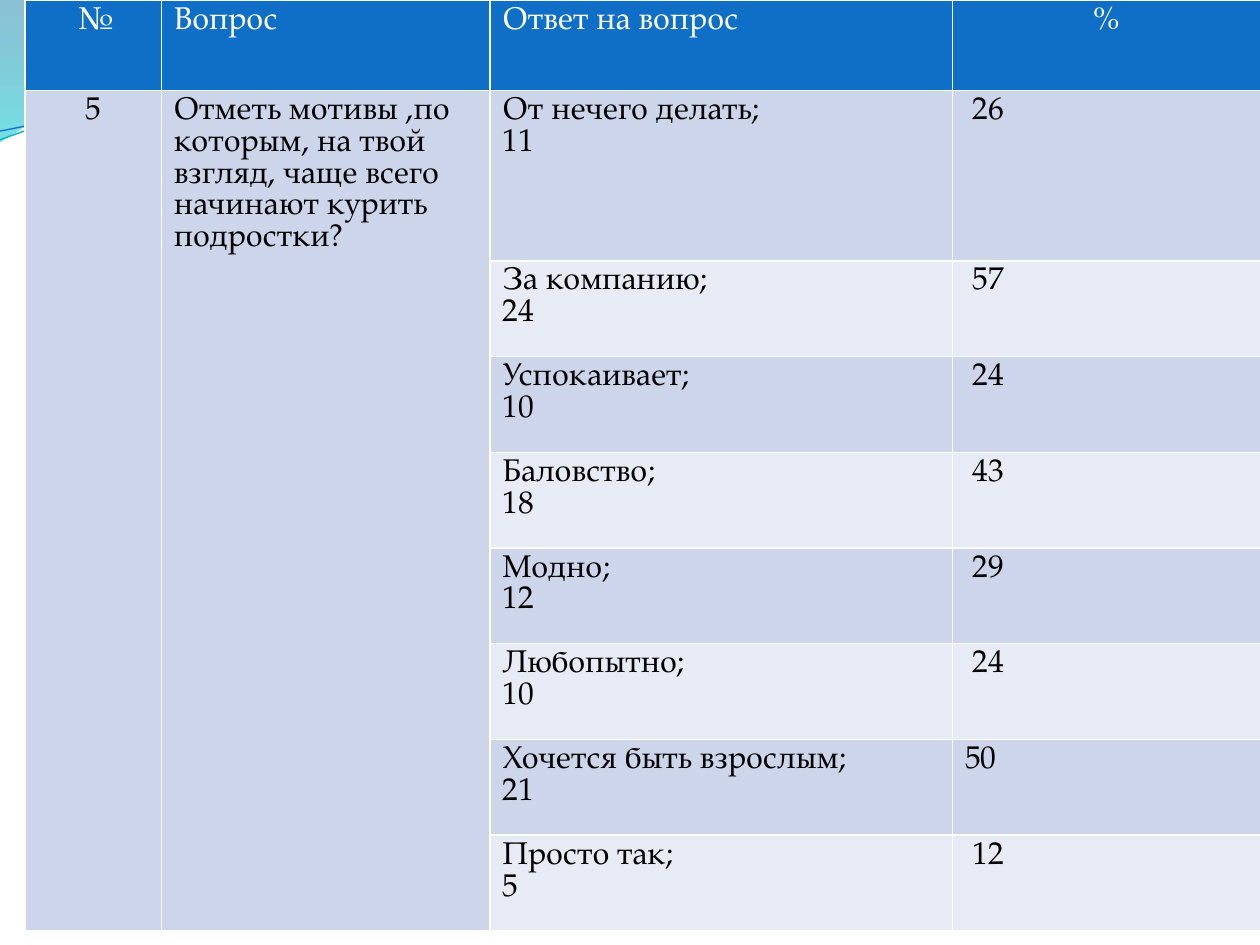
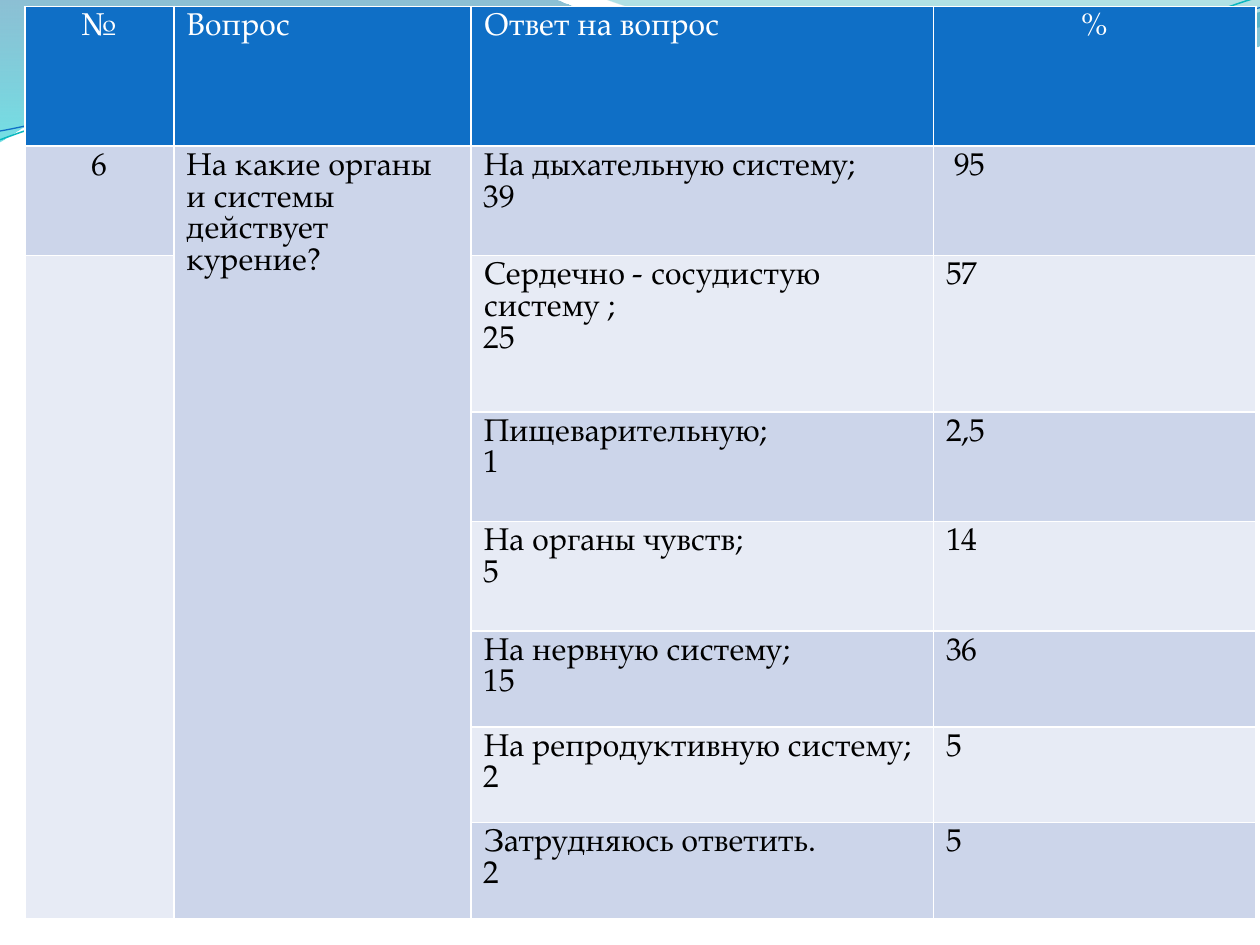
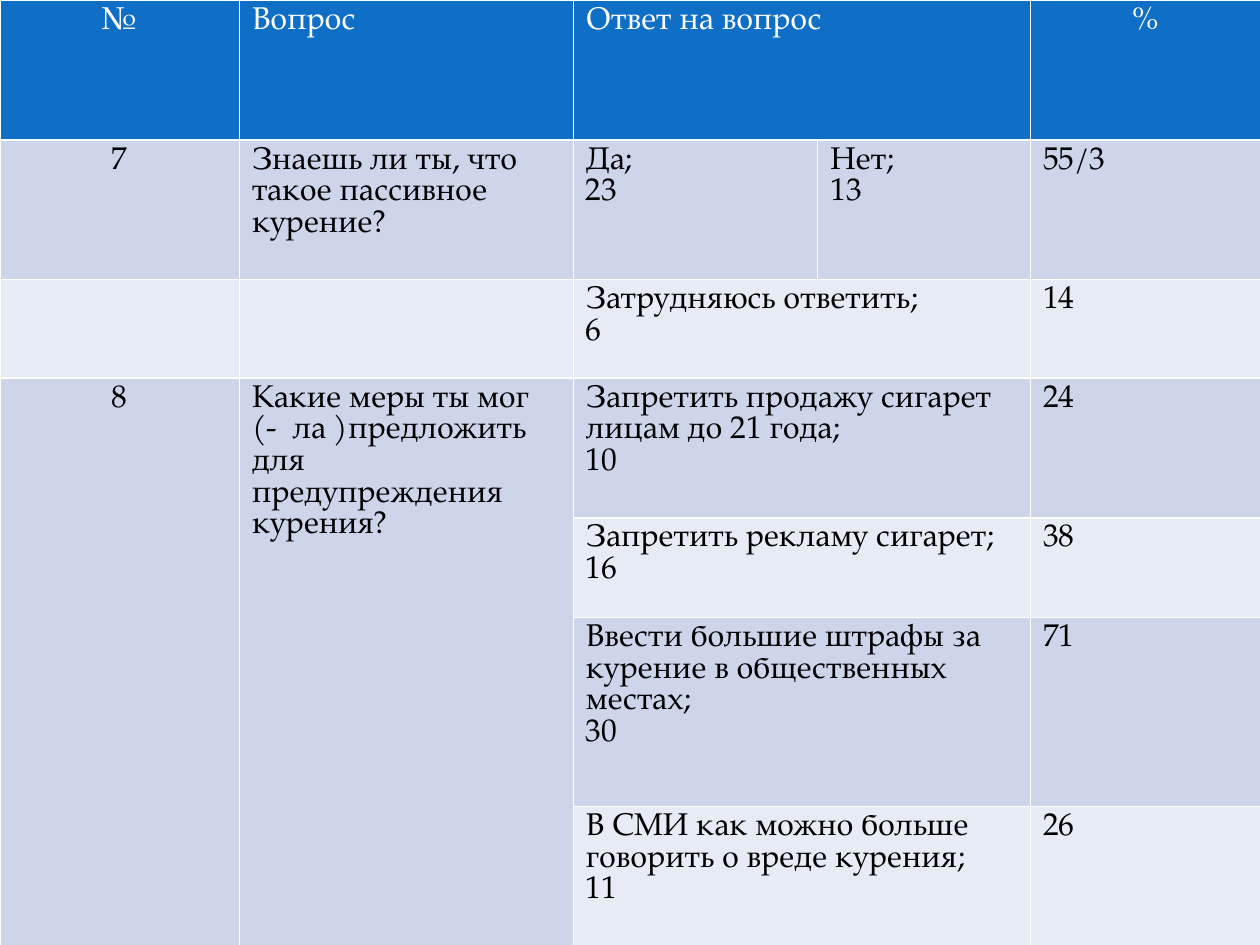
from dataclasses import dataclass
from math import cos, radians, sin
from lxml.etree import SubElement
from pptx import Presentation
from pptx.dml.color import RGBColor as RGB
from pptx.enum.text import PP_ALIGN as Align
from pptx.oxml.ns import qn
from pptx.util import Inches, Pt


@dataclass(frozen=True)
class Theme:
    font: str = "TeX Gyre Pagella"
    size: int = 18
    head: str = "0F6FC6"
    bands: tuple = ("E7EBF5", "CCD5EA")  # even rows, odd rows
    light: str = "FFFFFF"
    dark: str = "000000"


THEME = Theme()

# Survey tables: None marks a cell covered by a merge
SURVEY = [
    {
        "at": (0.2, 0),
        "cols": (1.08, 2.61, 3.67, 2.45),
        "rows": (0.72, 1.35) + (0.76,) * 7,
        "cells": [
            (" №", "Вопрос", "Ответ на вопрос", "%"),
            ("5", "Отметь мотивы ,по которым, на твой взгляд, чаще всего "
             "начинают курить подростки?", "От нечего делать;\n11", " 26"),
            (None, None, "За компанию;\n24", " 57"),
            (None, None, "Успокаивает;\n10", " 24"),
            (None, None, "Баловство;\n18", " 43"),
            (None, None, "Модно;\n12", " 29"),
            (None, None, "Любопытно;\n10", " 24"),
            (None, None, "Хочется быть взрослым;\n21", "50"),
            (None, None, "Просто так;\n5", " 12"),
        ],
    },
    {
        "at": (0.2, 0.05),
        "cols": (1.18, 2.36, 3.67, 2.56),
        "rows": (1.11, 0.87, 1.24, 0.87, 0.87, 0.76, 0.76, 0.76),
        "cells": [
            ("№", "Вопрос", "Ответ на вопрос", "%"),
            ("6", "На какие органы и системы действует курение?",
             "На дыхательную систему;\n39", " 95"),
            ("", None, "Сердечно - сосудистую систему ;\n25", "57"),
            (None, None, "Пищеварительную;\n1", "2,5"),
            (None, None, "На органы чувств;\n5", "14"),
            (None, None, "На нервную систему;\n15", "36"),
            (None, None, "На репродуктивную систему;\n2", "5"),
            (None, None, "Затрудняюсь ответить.\n2", "5"),
        ],
    },
    {
        "at": (0, 0),
        "cols": (1.9, 2.65, 1.94, 1.69, 1.83),
        "rows": (1.11, 1.11, 0.78, 1.11, 0.79, 1.5, 1.11),
        "cells": [
            ("№", "Вопрос", "Ответ на вопрос", None, "%"),
            ("7", "Знаешь ли ты, что такое пассивное курение?",
             "Да;\n23", "Нет;\n13", "55/3"),
            ("", "", "Затрудняюсь ответить;\n6", None, "14"),
            ("8", "Какие меры ты мог (-  ла )предложить для предупреждения "
             "курения?", "Запретить продажу сигарет лицам до 21 года;\n10",
             None, "24"),
            (None, None, "Запретить рекламу сигарет;\n16", None, "38"),
            (None, None, "Ввести большие штрафы за курение в общественных "
             "местах;\n30", None, "71"),
            (None, None, "В СМИ как можно больше говорить о вреде курения;"
             "\n11", None, "26"),
        ],
    },
]

# Waves: start point, then steps of one point (line) or three (curve)
FILLS = [
    ([(0, 0), [(4.4, -0.01)],
      [(4.76, 0.17), (6.64, 0.63), (7.58, 0.63)],
      [(8.53, 0.63), (9.58, 0.26), (10, 0.09)], [(10.01, 0.36)],
      [(9.83, 0.44), (8.7, 0.76), (7.46, 0.75)],
      [(6.22, 0.75), (3.82, 0.28), (2.57, 0.34)],
      [(1.29, 0.36), (0.46, 0.83), (-0.01, 1.13)], [(0, 0)]],
     [(0, "0074A1", 45), (1, "00C6CF", 55)]),
    ([(4.79, -0.01), [(5.09, 0.11), (6.82, 0.62), (7.69, 0.65)],
      [(8.56, 0.69), (9.61, 0.32), (10, 0.21)], [(10, 0)],
      [(4.79, -0.01)]],
     [(0, "00A1A9", 30), (0.8, "008BBF", 45)]),
]
LINES = [
    ([(0, 1.11), [(0.48, 0.93), (1.58, 0.57), (2.77, 0.52)],
      [(3.95, 0.47), (5.93, 0.89), (7.13, 0.8)],
      [(8.33, 0.71), (9.38, 0.15), (9.98, -0.02)]], "0AB8BF", 0.85),
    ([(0, 1.04), [(0.47, 0.96), (1.64, 0.61), (2.83, 0.56)],
      [(4.03, 0.51), (5.97, 0.84), (7.17, 0.75)],
      [(8.36, 0.67), (9.41, 0.21), (10, 0.06)]], "0F6FC6", 0.75),
]
TILT, HUB = -2.7, (4.99, 0.58)  # degrees and centre of the two lines


# Waves behind every table
def turn(point, angle):
    """Turn a point about the hub, clockwise as drawn."""
    a = radians(angle)
    x, y = (p - h for p, h in zip(point, HUB))
    return HUB[0] + x * cos(a) - y * sin(a), HUB[1] + x * sin(a) + y * cos(a)


def add_wave(slide, path, close, tilt=0):
    start, *steps = path
    pen = slide.shapes.build_freeform(*turn(start, -tilt), scale=Inches(1))
    # Fine local units keep the outline smooth
    pen = slide.shapes.build_freeform(
        *(v * 1000 for v in turn(start, -tilt)), scale=Inches(1) / 1000)
    points = [turn(p, -tilt) for step in steps for p in step]
    pen.add_line_segments([(x * 1000, y * 1000) for x, y in points],
                          close=close)
    wave = pen.convert_to_shape()
    wave.shadow.inherit = False
    wave.rotation = tilt % 360
    # Join each three segments of a curve into one Bezier
    marks = iter(list(wave.element.iter(qn("a:lnTo"))))
    for step in steps:
        group = [next(marks) for _ in step]
        if len(group) == 3:
            curve = SubElement(group[0].getparent(), qn("a:cubicBezTo"))
            group[0].addprevious(curve)
            for mark in group:
                curve.append(mark[0])
                mark.getparent().remove(mark)
    return wave


def add_waves(slide, layout):
    """Draw the waves and hand them to the layout, so all slides share them."""
    waves = []
    for path, stops in FILLS:
        wave = add_wave(slide, path, True)
        wave.line.fill.background()
        wave.fill.gradient()
        wave.fill.gradient_angle = 270
        for stop, (place, color, alpha) in zip(wave.fill.gradient_stops, stops):
            stop.position = place
            stop.color.rgb = RGB.from_string(color)
            tint = stop.color._xFill.find(qn("a:srgbClr"))
            SubElement(tint, qn("a:alpha"), val=str(alpha * 1000))
        waves.append(wave)
    for path, color, width in LINES:
        wave = add_wave(slide, path, False, TILT)
        wave.fill.background()
        wave.line.color.rgb = RGB.from_string(color)
        wave.line.width = Pt(width)
        waves.append(wave)
    for wave in waves:
        layout.shapes.element.append(wave.element)


# Tables: the default table style draws the white rules
def find_end(cells, row, col):
    """Last cell of the merge that starts here: down or across."""
    end, edge = row, col
    if col < 2:
        while end + 1 < len(cells) and cells[end + 1][col] is None:
            end += 1
    else:
        while edge + 1 < len(cells[row]) and cells[row][edge + 1] is None:
            edge += 1
    return end, edge


def fill_cell(cell, text, row, center):
    head = row == 0
    cell.fill.solid()
    cell.fill.fore_color.rgb = RGB.from_string(
        THEME.head if head else THEME.bands[row % 2])
    if not text:
        return
    cell.text_frame.text = text
    for para in cell.text_frame.paragraphs:
        if center:
            para.alignment = Align.CENTER
        para.font.name = THEME.font
        para.font.size = Pt(THEME.size)
        para.font.bold = False
        para.font.color.rgb = RGB.from_string(
            THEME.light if head else THEME.dark)


def add_survey(slide, at, cols, rows, cells):
    box = (*at, sum(cols), sum(rows))
    table = slide.shapes.add_table(len(rows), len(cols),
                                   *map(Inches, box)).table
    for col, width in zip(table.columns, cols):
        col.width = Inches(width)
    for row, height in zip(table.rows, rows):
        row.height = Inches(height)
    last = len(cols) - 1
    for r, line in enumerate(cells):
        for c, text in enumerate(line):
            center = c == 0 or (r == 0 and c == last)
            fill_cell(table.cell(r, c), text, r, center)
            end = find_end(cells, r, c)
            if text is not None and end != (r, c):
                table.cell(r, c).merge(table.cell(*end))


def main():
    deck = Presentation()
    deck.slide_width, deck.slide_height = Inches(10), Inches(7.5)
    blank = deck.slide_layouts[6]
    for n, survey in enumerate(SURVEY):
        slide = deck.slides.add_slide(blank)
        if n == 0:
            add_waves(slide, blank)
        add_survey(slide, **survey)
    deck.save("out.pptx")


if __name__ == "__main__":
    main()
